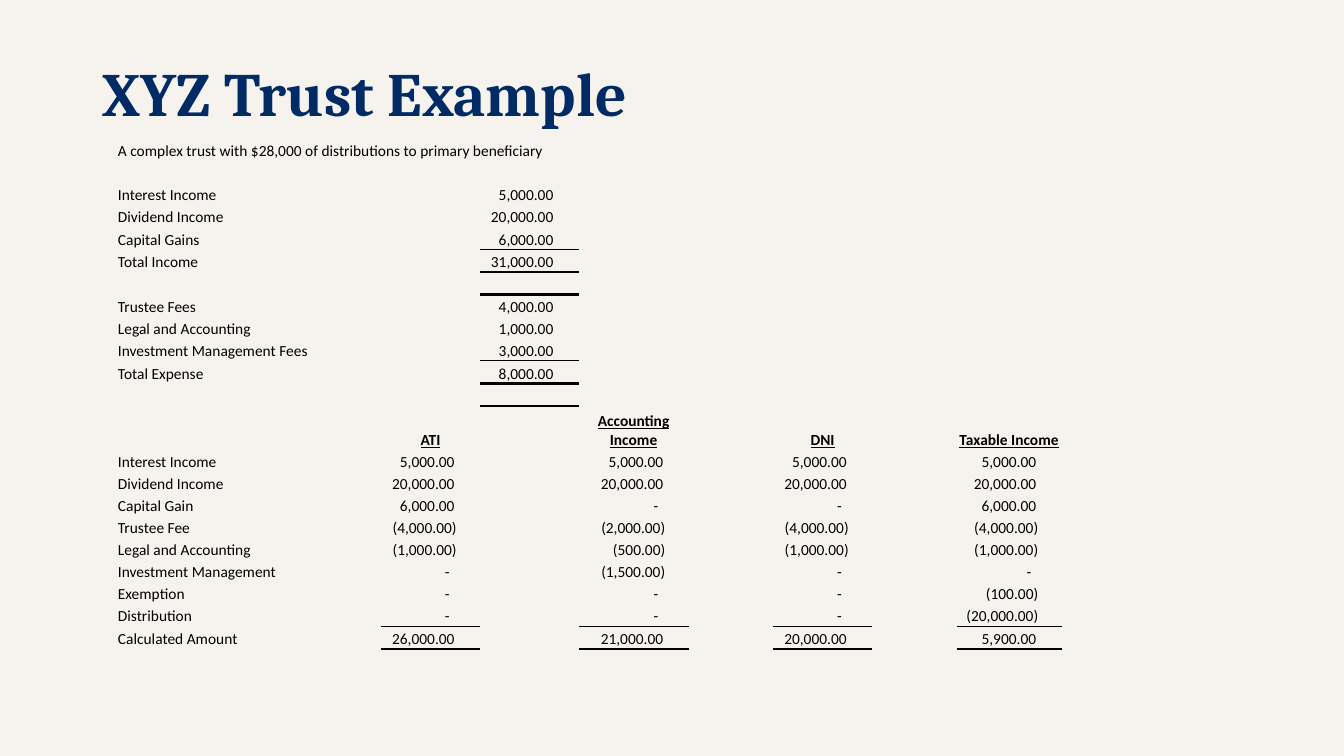
"""Builds the XYZ Trust Example slide with its income, expense and calculation table."""
from lxml import etree
from pptx import Presentation
from pptx import util as u
from pptx.dml.color import RGBColor
from pptx.enum import text
from pptx.oxml import ns

TITLE = "XYZ Trust Example"
SUMMARY = "A complex trust with $28,000 of distributions to primary beneficiary"
INCOME = [
    ("Interest Income", "5,000.00"),
    ("Dividend Income", "20,000.00"),
    ("Capital Gains", "6,000.00"),
    ("Total Income", "31,000.00"),
]
EXPENSES = [
    ("Trustee Fees", "4,000.00"),
    ("Legal and Accounting", "1,000.00"),
    ("Investment Management Fees", "3,000.00"),
    ("Total Expense", "8,000.00"),
]
HEADINGS = ("", "ATI", "Accounting Income", "DNI", "Taxable Income")
CALCULATION = [
    ("Interest Income", "5,000.00", "5,000.00", "5,000.00", "5,000.00"),
    ("Dividend Income", "20,000.00", "20,000.00", "20,000.00", "20,000.00"),
    ("Capital Gain", "6,000.00", "-", "-", "6,000.00"),
    ("Trustee Fee", "(4,000.00)", "(2,000.00)", "(4,000.00)", "(4,000.00)"),
    ("Legal and Accounting", "(1,000.00)", "(500.00)", "(1,000.00)", "(1,000.00)"),
    ("Investment Management", "-", "(1,500.00)", "-", "-"),
    ("Exemption", "-", "-", "-", "(100.00)"),
    ("Distribution", "-", "-", "-", "(20,000.00)"),
    ("Calculated Amount", "26,000.00", "21,000.00", "20,000.00", "5,900.00"),
]

WIDTH, HEIGHT = 13.33, 7.5
TABLE_LEFT, TABLE_TOP, TABLE_HEIGHT = 1.16, 1.38, 5.06
COLUMNS = (2.62, 0.98, 0.98, 1.09, 0.84, 0.98, 0.84, 1.04)
AMOUNT_COLUMN = (0, 2)
CALCULATION_COLUMNS = (0, 1, 3, 5, 7)
TALL_ROW, HEADING_ROW = 1.03, 2
THIN_RULE, THICK_RULE = 0.5, 2
NO_GRID_STYLE = "{2D5ABB26-0587-4C30-8999-92F81FD0307C}"
INK, NAVY, CREAM = "000000", "002B64", "F6F3EF"


def colour(value):
    return RGBColor.from_string(value)


def plan_table():
    """Return the cell texts, the rule under each amount cell and the row weights."""
    cells, rules = {(0, 0): SUMMARY}, {}
    row = 2
    weights = {}
    for block, columns in ((INCOME, AMOUNT_COLUMN), (EXPENSES, AMOUNT_COLUMN),
                           ([HEADINGS] + CALCULATION, CALCULATION_COLUMNS)):
        for offset, values in enumerate(block):
            for column, value in zip(columns, values):
                cells[row + offset, column] = value
        total = row + len(block) - 1
        for column in columns[1:]:
            rules[total - 1, column] = THIN_RULE
            rules[total, column] = THICK_RULE
        weights[total] = weights[total + 1] = TALL_ROW
        heading = row
        row = total + 2
    weights[heading] = HEADING_ROW
    return cells, rules, [weights.get(index, 1) for index in range(row - 1)], heading


def right_margin(value):
    """Leave room so that digits, brackets and dashes line up as in accounting."""
    if value == "-":
        return 0.3
    return 0.23 if value.endswith(")") else 0.25


def add_rule(cell, side, points):
    line = etree.SubElement(cell._tc.get_or_add_tcPr(), ns.qn("a:" + side), w=str(u.Pt(points)))
    fill = etree.SubElement(line, ns.qn("a:solidFill"))
    etree.SubElement(fill, ns.qn("a:srgbClr"), val=INK)


def fill_cell(cell, value, column, is_heading):
    cell.margin_left = cell.margin_right = cell.margin_top = u.Inches(0.01)
    cell.margin_bottom = 0
    cell.vertical_anchor = text.MSO_ANCHOR.BOTTOM
    para = cell.text_frame.paragraphs[0]
    if not value:
        etree.SubElement(para._p, ns.qn("a:endParaRPr"), sz="1100")
        return
    para.text = value
    if is_heading:
        para.alignment = text.PP_ALIGN.CENTER
    elif column:
        para.alignment = text.PP_ALIGN.RIGHT
        cell.margin_right = u.Inches(right_margin(value))
    font = para.runs[0].font
    font.name, font.size = "Calibri", u.Pt(11)
    font.bold = font.underline = is_heading
    font.color.rgb = colour(INK)


def add_title(page):
    title = page.shapes.title
    title.left, title.top = u.Inches(0.92), u.Inches(0.4)
    title.width, title.height = u.Inches(11.5), u.Inches(1.12)
    title.text_frame.text = TITLE
    title.text_frame.auto_size = text.MSO_AUTO_SIZE.NONE
    title.text_frame.vertical_anchor = text.MSO_ANCHOR.MIDDLE
    para = title.text_frame.paragraphs[0]
    para.alignment, para.line_spacing = text.PP_ALIGN.LEFT, 0.9
    font = para.runs[0].font
    font.name, font.size, font.bold = "Cambria", u.Pt(44), True
    font.color.rgb = colour(NAVY)


def add_trust_table(page):
    cells, rules, weights, heading = plan_table()
    table = page.shapes.add_table(
        len(weights), len(COLUMNS), u.Inches(TABLE_LEFT), u.Inches(TABLE_TOP),
        u.Inches(sum(COLUMNS)), u.Inches(TABLE_HEIGHT)).table
    table.first_row = table.horz_banding = False
    table._tbl.tblPr.find(ns.qn("a:tableStyleId")).text = NO_GRID_STYLE
    for column, width in enumerate(COLUMNS):
        table.columns[column].width = u.Inches(width)
    for row, weight in enumerate(weights):
        table.rows[row].height = u.Inches(TABLE_HEIGHT * weight / sum(weights))
        for column in range(len(COLUMNS)):
            cell = table.cell(row, column)
            fill_cell(cell, cells.get((row, column)), column, row == heading)
            for side, above in (("lnT", row - 1), ("lnB", row)):
                if (above, column) in rules:
                    add_rule(cell, side, rules[above, column])
            cell.fill.background()
    table.cell(0, 0).merge(table.cell(0, 3))


def main():
    deck = Presentation()
    deck.slide_width, deck.slide_height = u.Inches(WIDTH), u.Inches(HEIGHT)
    page = deck.slides.add_slide(deck.slide_layouts[5])
    page.background.fill.solid()
    page.background.fill.fore_color.rgb = colour(CREAM)
    add_title(page)
    add_trust_table(page)
    deck.save("out.pptx")


if __name__ == "__main__":
    main()
